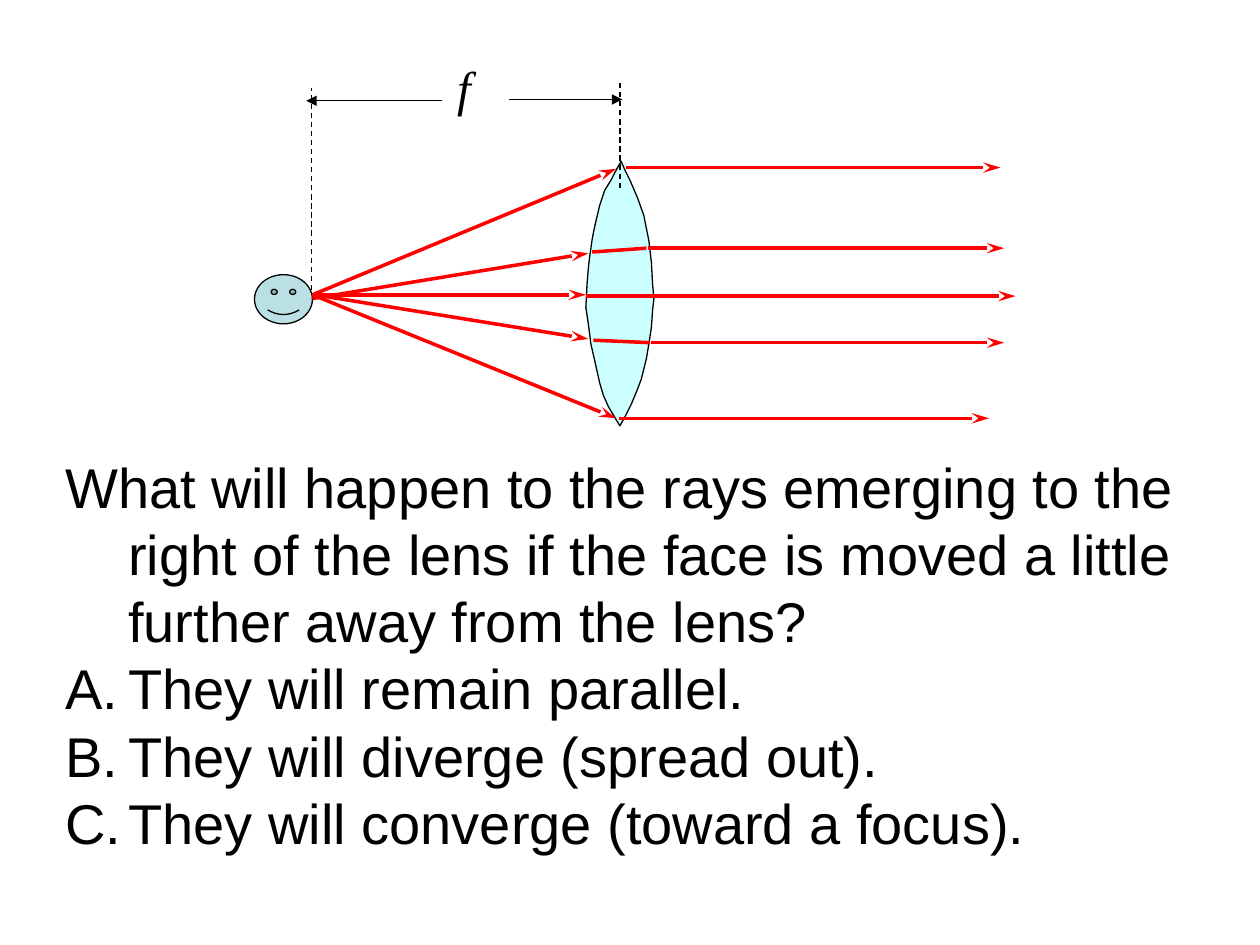
"""Builds a slide asking how rays leave a lens when the face moves past its focal length."""
from lxml.etree import SubElement
from pptx import Presentation
from pptx.dml.color import RGBColor
from pptx.enum.dml import MSO_LINE
from pptx.enum.shapes import MSO_CONNECTOR, MSO_SHAPE
from pptx.enum.text import MSO_AUTO_SIZE
from pptx.oxml.ns import qn
from pptx.util import Pt

PX = 9144
BLACK, RED, LENS, FACE = "000000", "FF0000", "CCFFFF", "BBE0E3"


def add_line(ends, color, width, head=None, length="med", dash=None):
    c = s.shapes.add_connector(MSO_CONNECTOR.STRAIGHT, *[v * PX for v in ends])
    c.line.color.rgb = RGBColor.from_string(color)
    c.line.width = Pt(width)
    if dash:
        c.line.dash_style = dash
    if head:
        SubElement(c.line._get_or_add_ln(), qn("a:tailEnd"), type=head, w="med", len=length)
    SubElement(c._element.spPr, qn("a:effectLst"))


def add_text(box, paragraphs, wrap, font):
    tf = s.shapes.add_textbox(*[v * PX for v in box]).text_frame
    tf.word_wrap = wrap
    tf.auto_size = MSO_AUTO_SIZE.SHAPE_TO_FIT_TEXT
    for i, text in enumerate(paragraphs):
        p = tf.paragraphs[0] if i == 0 else tf.add_paragraph()
        r = p.add_run()
        r.text = text
        for name, value in font.items():
            setattr(r.font, name, value)
        r.font.color.rgb = RGBColor.from_string(BLACK)
    return tf


prs = Presentation()
prs.slide_width, prs.slide_height = 1000 * PX, 750 * PX
s = prs.slides.add_slide(prs.slide_layouts[6])

question = [
    "What will happen to the rays emerging to the right of the lens "
    "if the face is moved a little further away from the lens?",
    "They will remain parallel.",
    "They will diverge (spread out).",
    "They will converge (toward a focus).",
]
tf = add_text((42, 354, 921, 333), question, True, {"name": "Arial", "size": Pt(32)})
for i, p in enumerate(tf.paragraphs):
    pPr = p._p.get_or_add_pPr()
    pPr.set("marL", str(50 * PX))
    pPr.set("indent", str(-50 * PX))
    if i:
        SubElement(pPr, qn("a:buFont"), typeface="Arial")
        SubElement(pPr, qn("a:buAutoNum"), type="alphaUcPeriod")
    else:
        SubElement(pPr, qn("a:buNone"))

add_text((353, 41, 31, 57), ["f"], False,
         {"name": "Times New Roman", "size": Pt(28), "italic": True})

outline = [
    (492, 338), (496, 331), (501, 321), (506, 309), (509, 301), (513, 285), (515, 273),
    (517, 260), (518, 246), (519, 237), (518, 226), (517, 208), (515, 191), (511, 171),
    (506, 157), (500, 143), (496, 135), (493, 128), (488, 137), (485, 143), (480, 151),
    (476, 163), (472, 180), (470, 190), (468, 204), (467, 213), (466, 225), (465, 244),
    (467, 257), (469, 273), (472, 286), (476, 304), (479, 314), (483, 323), (489, 333),
]
builder = s.shapes.build_freeform(*outline[0], scale=PX)
builder.add_line_segments(outline[1:], close=True)
lens = builder.convert_to_shape()

for ends in [(470, 200, 513, 197), (471, 270, 516, 272)]:
    add_line(ends, RED, 2)
for ends in [(247, 230, 247, 70), (492, 149, 492, 65)]:
    add_line(ends, BLACK, 0.75, dash=MSO_LINE.DASH)
for ends in [(404, 79, 494, 79), (351, 80, 243, 80)]:
    add_line(ends, BLACK, 0.75, "triangle")

face = s.shapes.add_shape(MSO_SHAPE.SMILEY_FACE, *[v * PX for v in (202, 218, 46, 39)])
for sp, color in [(lens, LENS), (face, FACE)]:
    sp.shadow.inherit = False
    sp.fill.solid()
    sp.fill.fore_color.rgb = RGBColor.from_string(color)
    sp.line.color.rgb = RGBColor.from_string(BLACK)
    sp.line.width = Pt(0.75)

incoming = [
    (248, 234, 489, 134), (248, 237, 467, 201), (249, 234, 465, 234),
    (250, 234, 467, 269), (248, 234, 489, 332),
]
outgoing = [(497, 133, 794), (514, 197, 797), (465, 235, 806), (517, 272, 797), (491, 332, 785)]
for ends in incoming + [(x1, y, x2, y) for x1, y, x2 in outgoing]:
    add_line(ends, RED, 2, "stealth", "lg")

prs.save("out.pptx")
